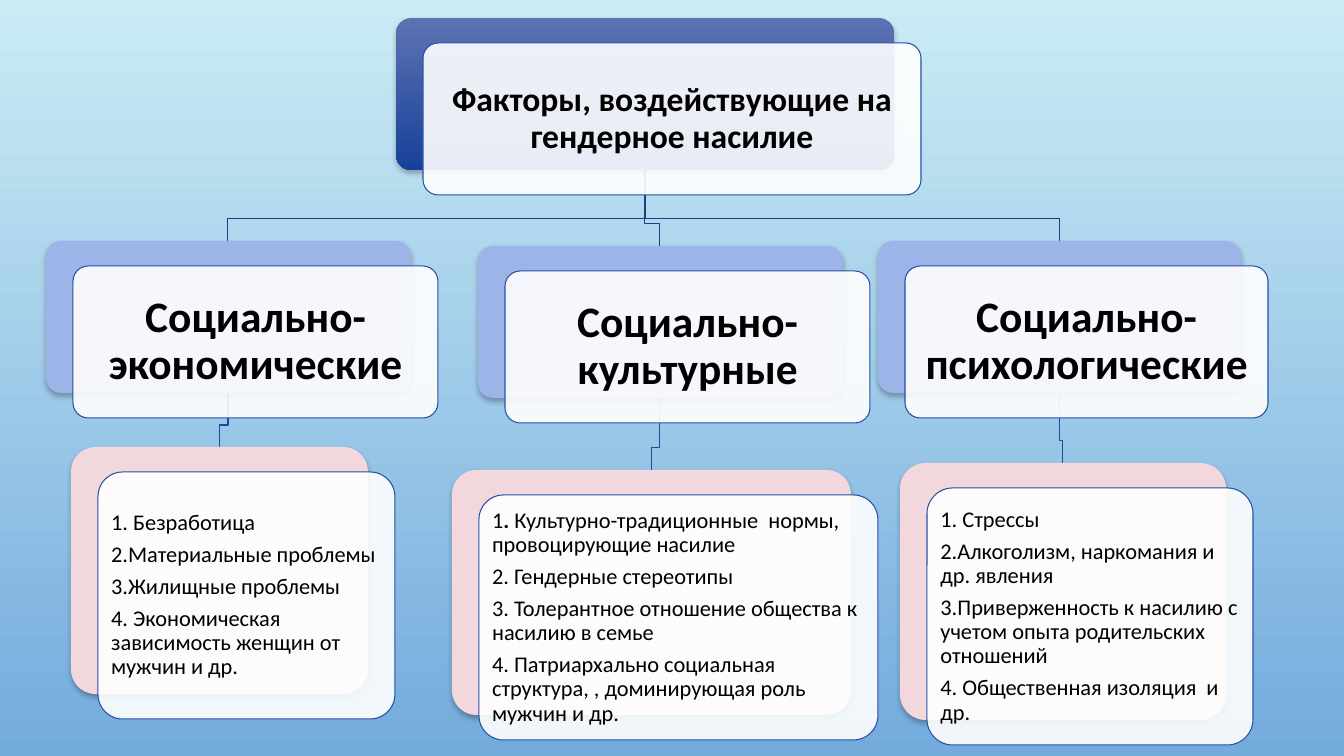
from lxml.etree import SubElement
from pptx import Presentation
from pptx.dml.color import RGBColor
from pptx.enum.shapes import MSO_SHAPE
from pptx.enum.text import MSO_ANCHOR, MSO_AUTO_SIZE, PP_ALIGN
from pptx.oxml.ns import qn
from pptx.util import Pt

SCALE = 914400 / 100.8  # EMU in one px
CARD_H = 152
SHIFT_X, SHIFT_Y = 27, 25  # front card against its back card
BEND = 22  # elbow height above the lower card


def px(length):
    return round(length * SCALE)


def colour(value):
    return RGBColor.from_string(value)


class FactorTree:
    font = "Calibri"
    ink = "000000"
    edge = "274FA4"

    def __init__(self, page):
        self.page = page
        self.shapes = page.shapes

    def gradient(self, fill, top, bottom):
        fill.gradient()
        fill.gradient_angle = 270
        for stop, value in zip(fill.gradient_stops, (top, bottom)):
            stop.color.rgb = colour(value)

    def elbow(self, upper, lower, line):
        """Link the bottom of one back card to the top of another."""
        x1, y1 = upper[0] + upper[2] / 2, upper[1] + upper[3]
        x2, y2 = lower[0] + lower[2] / 2, lower[1]
        builder = self.shapes.build_freeform(x1, y1, scale=SCALE)
        builder.add_line_segments(
            [(x1, y2 - BEND), (x2, y2 - BEND), (x2, y2)], close=False)
        link = builder.convert_to_shape()
        link.shadow.inherit = False
        link.fill.background()
        link.line.color.rgb = colour(line)
        link.line.width = Pt(0.75)

    def rounded(self, x, y, width, height):
        card = self.shapes.add_shape(
            MSO_SHAPE.ROUNDED_RECTANGLE, px(x), px(y), px(width), px(height))
        card.adjustments[0] = 0.1
        card.shadow.inherit = False
        return card

    def cards(self, place, fill):
        """Draw a shadowed back card and a translucent front card."""
        x, y, width, height = place
        back = self.rounded(*place)
        if isinstance(fill, tuple):
            self.gradient(back.fill, *fill)
        else:
            back.fill.solid()
            back.fill.fore_color.rgb = colour(fill)
        back.line.fill.background()
        effects = back.element.spPr.find(qn("a:effectLst"))
        shadow = SubElement(effects, qn("a:outerShdw"), blurRad="50800",
                            dist="25400", dir="5400000", rotWithShape="0")
        black = SubElement(shadow, qn("a:srgbClr"), val="000000")
        SubElement(black, qn("a:alpha"), val="28000")

        front = self.rounded(x + SHIFT_X, y + SHIFT_Y, width, height)
        front.fill.solid()
        front.fill.fore_color.rgb = colour("FFFFFF")
        white = front.element.spPr.find(qn("a:solidFill"))[0]
        SubElement(white, qn("a:alpha"), val="90000")
        front.line.color.rgb = colour(self.edge)
        front.line.width = Pt(0.75)

    def text(self, box, place, paragraphs, size, margin, align):
        """Fill a box lying inside the rounded corners of the front card."""
        x, y, width, height = place
        inset = height * 0.029
        box.left, box.top = px(x + SHIFT_X + inset), px(y + SHIFT_Y + inset)
        box.width, box.height = px(width - 2 * inset), px(height - 2 * inset)
        self.shapes.element.append(box.element)  # bring to front
        frame = box.text_frame
        frame.word_wrap = True
        frame.auto_size = MSO_AUTO_SIZE.NONE
        frame.vertical_anchor = MSO_ANCHOR.MIDDLE
        frame.margin_left = frame.margin_right = px(margin)
        frame.margin_top = frame.margin_bottom = px(margin)
        for number, runs in enumerate(paragraphs):
            para = frame.add_paragraph() if number else frame.paragraphs[0]
            properties = para._p.get_or_add_pPr()
            properties.set("marL", "0")
            properties.set("indent", "0")
            SubElement(properties, qn("a:buNone"))
            para.alignment = align
            para.line_spacing = 0.9
            para.space_before = Pt(0)
            para.space_after = Pt(size * 0.35)
            for words, bold in runs:
                span = para.add_run()
                span.text = words
                span.font.name = self.font
                span.font.size = Pt(size)
                span.font.bold = bold
                span.font.color.rgb = colour(self.ink)

    def heading(self, box, place, words, size, margin):
        self.text(box, place, [[(words, True)]], size, margin, PP_ALIGN.CENTER)

    def label(self, place, words):
        box = self.shapes.add_textbox(0, 0, 0, 0)
        self.heading(box, place, words, 31, 13)

    def listing(self, box, place, items):
        paragraphs = [[(item, False)] if isinstance(item, str) else item
                      for item in items]
        self.text(box, place, paragraphs, 16, 6, PP_ALIGN.LEFT)


ROOT = (396, 18, 498, CARD_H)
# Category card, category name, list card, list items
BRANCHES = [
    ((46, 241, 365, CARD_H), "Социально-экономические", (71, 447, 297, 247), [
        "1. Безработица",
        "2.Материальные проблемы",
        "3.Жилищные проблемы",
        "4. Экономическая зависимость женщин от мужчин и др.",
    ]),
    ((478, 246, 365, CARD_H), "Социально-культурные", (452, 470, 399, 245), [
        [("1", False), (". ", True),
         ("Культурно-традиционные  нормы, провоцирующие насилие", False)],
        "2. Гендерные стереотипы",
        "3. Толерантное отношение общества к насилию в семье",
        "4. Патриархально социальная структура, , доминирующая роль мужчин и др.",
    ]),
    ((878, 241, 363, CARD_H), "Социально-психологические", (900, 463, 326, 257), [
        "1. Стрессы",
        "2.Алкоголизм, наркомания и др. явления",
        "3.Приверженность к насилию с учетом опыта родительских отношений",
        "4. Общественная изоляция  и др.",
    ]),
]


def main():
    deck = Presentation()
    deck.slide_width, deck.slide_height = px(1344), px(756)
    page = deck.slides.add_slide(deck.slide_layouts.get_by_name("Comparison"))
    tree = FactorTree(page)
    tree.gradient(page.background.fill, "CBECF5", "73ABDD")
    title, *bodies = page.placeholders

    # Links
    for category, _, details, _ in BRANCHES:
        tree.elbow(category, details, "234895")
        tree.elbow(ROOT, category, "1F3F83")

    # Root
    tree.cards(ROOT, ("5E72B3", "174199"))
    tree.heading(title, ROOT, "Факторы, воздействующие на гендерное насилие", 24, 10)

    # Branches
    for (category, name, details, items), body in zip(BRANCHES, bodies):
        tree.cards(category, "9CB4E7")
        tree.label(category, name)
        tree.cards(details, "F2D8DC")
        tree.listing(body, details, items)

    # Unused placeholders
    for spare in bodies[len(BRANCHES):]:
        tree.shapes.element.remove(spare.element)

    deck.save("out.pptx")


if __name__ == "__main__":
    main()
